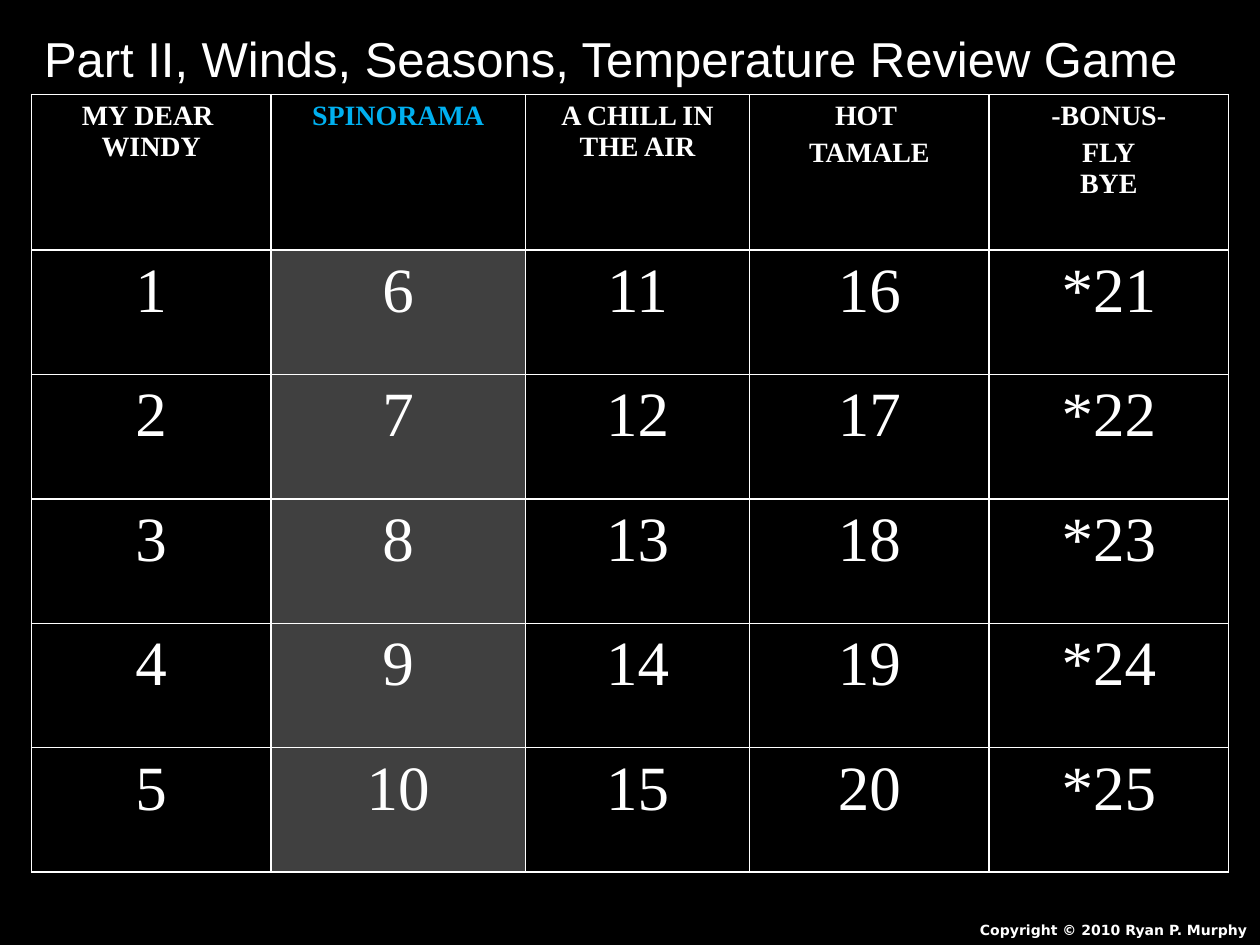
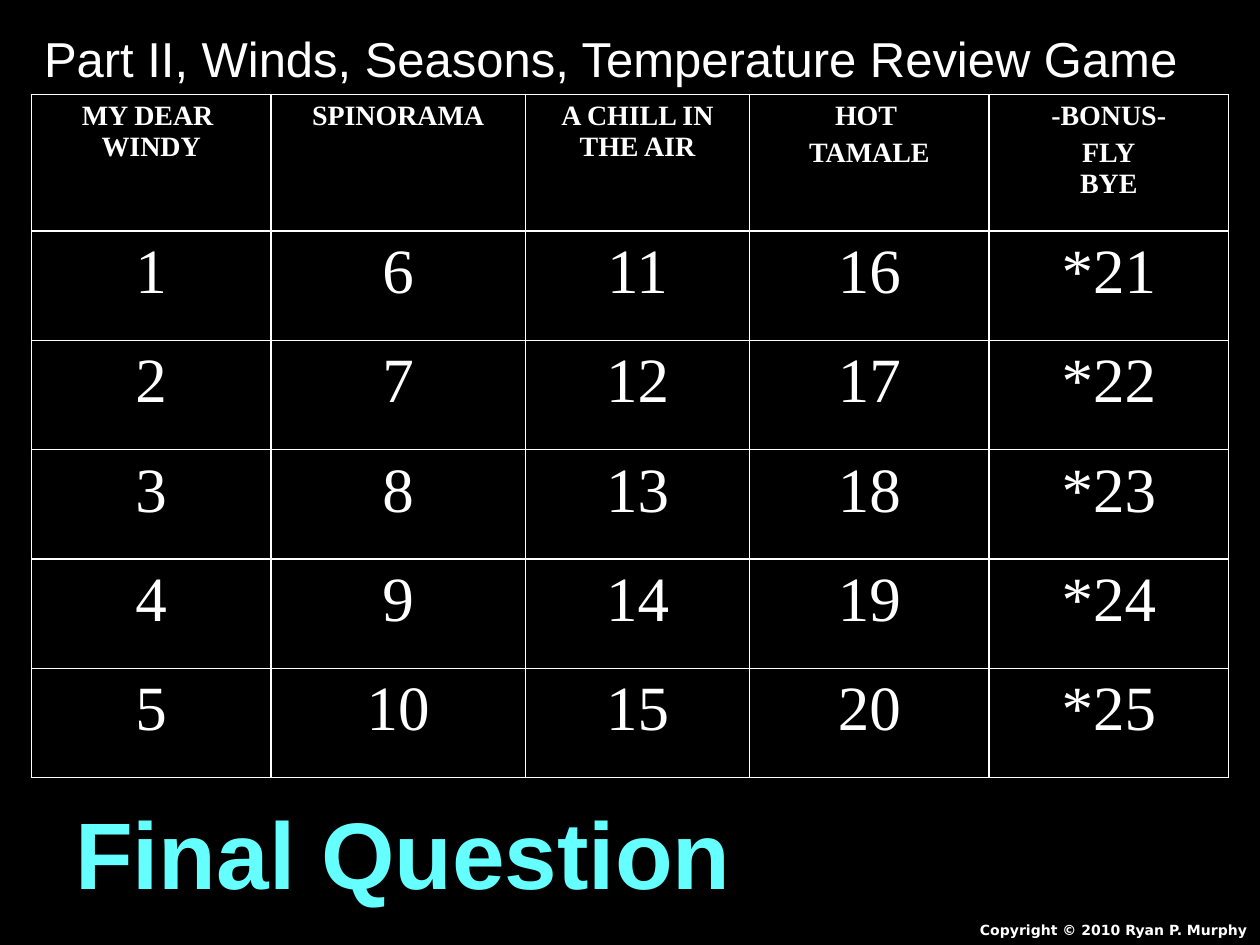
import copy
from dataclasses import dataclass

import lxml.etree
import pptx
import pptx.dml.color
import pptx.enum.text
import pptx.oxml.ns
import pptx.util

ALIGN = pptx.enum.text.PP_ALIGN
qn = pptx.oxml.ns.qn


@dataclass(frozen=True)
class Theme:
    background: str = "000000"
    text: str = "FFFFFF"
    picked_heading: str = "00B0F0"
    picked_fill: str = "404040"
    final: str = "66FFFF"
    title_font: str = "Arial"
    board_font: str = "Times New Roman"
    footer_font: str = "DejaVu Sans"
    title_size: int = 28
    heading_size: int = 16
    number_size: int = 36
    final_size: int = 54
    footer_size: int = 8
    border: float = 1
    space_before: int = 20


TITLE = "Part II, Winds, Seasons, Temperature Review Game"
FOOTER = "Copyright © 2010 Ryan P. Murphy"
HEADINGS = [
    ["MY DEAR \nWINDY"],
    ["SPINORAMA"],
    ["A CHILL IN THE AIR"],
    ["HOT ", "TAMALE"],
    ["-BONUS-", "FLY\nBYE"],
]
COLUMN_SHARES = [0.19, 0.202, 0.178, 0.19, 0.19]
QUESTIONS = 5
HEADING_ROWS = 1.25
SPINORAMA = 1
BONUS = len(HEADINGS) - 1


class Deck:
    def __init__(self, theme):
        self.theme = theme
        self.prs = pptx.Presentation()
        self.prs.slide_width = pptx.util.Inches(10)
        self.prs.slide_height = pptx.util.Inches(7.5)
        self.slide = None
        fill = self.prs.slide_master.background.fill
        fill.solid()
        fill.fore_color.rgb = self.rgb(theme.background)

    def rgb(self, color):
        return pptx.dml.color.RGBColor.from_string(color)

    def x(self, share):
        return round(self.prs.slide_width * share)

    def y(self, share):
        return round(self.prs.slide_height * share)

    def box(self, left, top, width, height):
        return self.x(left), self.y(top), self.x(width), self.y(height)

    def add_runs(self, p, text, font, size, color, bold=False, align=ALIGN.LEFT):
        p.alignment = align
        for i, line in enumerate(text.split("\n")):
            if i:
                p.add_line_break()
                p._p[-1].insert(0, copy.deepcopy(r._r.rPr))
            r = p.add_run()
            r.text = line
            r.font.name = font
            r.font.size = pptx.util.Pt(size)
            r.font.bold = bold
            r.font.color.rgb = self.rgb(color)

    def frame(self, sp, wrap=True):
        tf = sp.text_frame
        tf.word_wrap = wrap
        tf.auto_size = pptx.enum.text.MSO_AUTO_SIZE.SHAPE_TO_FIT_TEXT
        tf.vertical_anchor = pptx.enum.text.MSO_ANCHOR.TOP
        return tf.paragraphs[0]

    def new_slide(self, title):
        self.slide = self.prs.slides.add_slide(self.prs.slide_layouts[5])
        sp = self.slide.shapes.title
        sp.left, sp.top, sp.width, sp.height = self.box(0.025, 0.023, 0.933, 0.076)
        t = self.theme
        self.add_runs(self.frame(sp), title, t.title_font, t.title_size, t.text)

    def text(self, text, box, font, size, color, align, wrap=True):
        sp = self.slide.shapes.add_textbox(*self.box(*box))
        self.add_runs(self.frame(sp, wrap), text, font, size, color, True, align)

    def footer(self):
        t = self.theme
        self.text(FOOTER, (0.708, 0.969, 0.292, 0.031),
                  t.footer_font, t.footer_size, t.text, ALIGN.RIGHT)

    def cell(self, cell, paragraphs, size, color, bold, fill=None):
        tcPr = cell._tc.get_or_add_tcPr()
        for side in ("lnL", "lnR", "lnT", "lnB"):
            ln = lxml.etree.SubElement(tcPr, qn("a:" + side))
            ln.set("w", str(pptx.util.Pt(self.theme.border)))
            solid = lxml.etree.SubElement(ln, qn("a:solidFill"))
            lxml.etree.SubElement(solid, qn("a:srgbClr")).set("val", self.theme.text)
        if fill:
            cell.fill.solid()
            cell.fill.fore_color.rgb = self.rgb(fill)
        else:
            cell.fill.background()
        tf = cell.text_frame
        for i, text in enumerate(paragraphs):
            p = tf.add_paragraph() if i else tf.paragraphs[0]
            self.add_runs(p, text, self.theme.board_font, size, color, bold, ALIGN.CENTER)
            spacing = lxml.etree.SubElement(p._p.get_or_add_pPr(), qn("a:spcBef"))
            percent = lxml.etree.SubElement(spacing, qn("a:spcPct"))
            percent.set("val", str(self.theme.space_before * 1000))

    def board(self, height, picked=None):
        t = self.theme
        box = self.box(0.025, 0.1, sum(COLUMN_SHARES), height)
        table = self.slide.shapes.add_table(QUESTIONS + 1, len(HEADINGS), *box).table
        table.first_row = table.horz_banding = False
        row_share = height / (QUESTIONS + HEADING_ROWS)
        for i, row in enumerate(table.rows):
            row.height = self.y(row_share * (1 if i else HEADING_ROWS))
        for col, (share, heading) in enumerate(zip(COLUMN_SHARES, HEADINGS)):
            table.columns[col].width = self.x(share)
            color = t.picked_heading if col == picked else t.text
            fill = t.picked_fill if col == picked else None
            self.cell(table.cell(0, col), heading, t.heading_size, color, True)
            star = "*" if col == BONUS else ""
            for row in range(1, QUESTIONS + 1):
                number = f"{star}{col * QUESTIONS + row}"
                self.cell(table.cell(row, col), [number], t.number_size, t.text, False, fill)

    def final_question(self):
        t = self.theme
        self.text("Final Question", (0.047, 0.835, 0.546, 0.135),
                  t.title_font, t.final_size, t.final, ALIGN.CENTER, wrap=False)


def main():
    deck = Deck(Theme())
    for height, picked in ((0.823, SPINORAMA), (0.723, None)):
        deck.new_slide(TITLE)
        deck.board(height, picked)
        deck.footer()
    deck.final_question()
    deck.prs.save("out.pptx")


if __name__ == "__main__":
    main()
